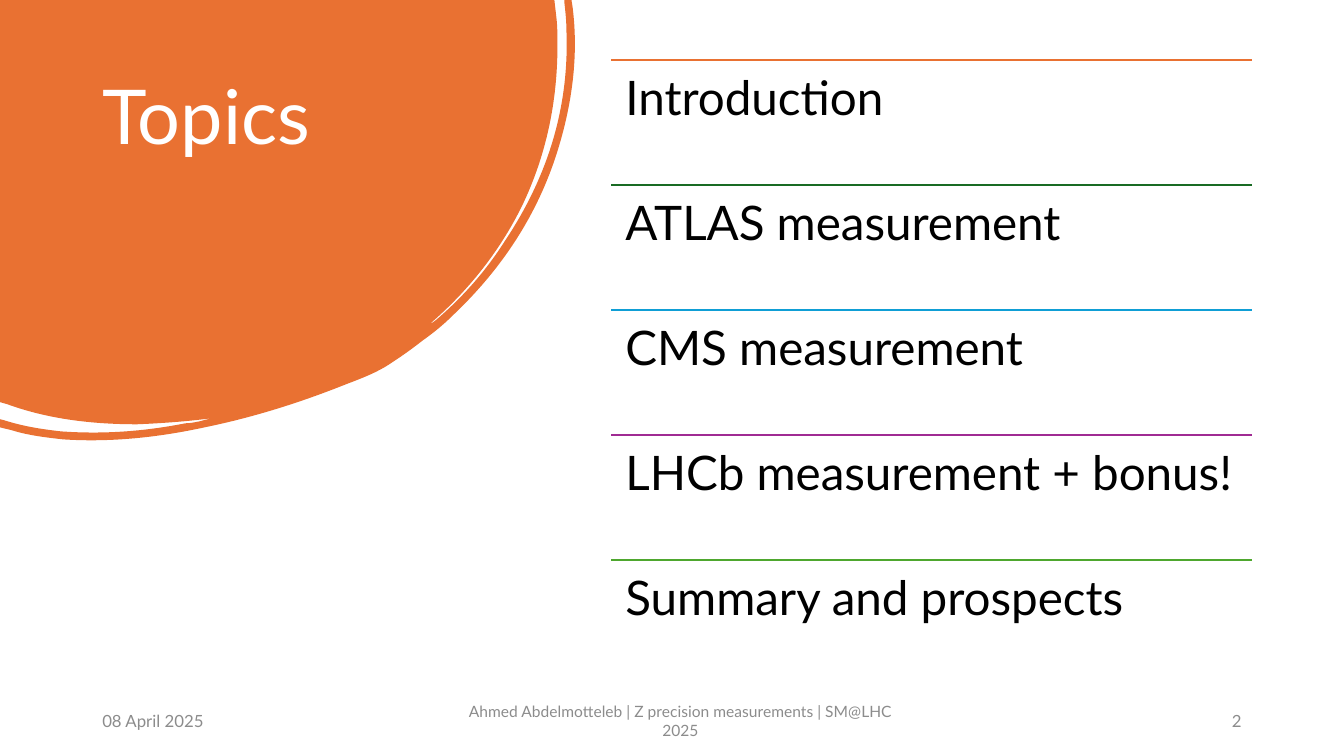
from lxml import etree
from pptx import Presentation
from pptx.dml.color import RGBColor
from pptx.enum import shapes, text
from pptx.oxml import ns
from pptx.util import Pt

FONT = "Lato"
COLORS = {"orange": "E97132", "green": "196B24", "blue": "0F9ED5", "purple": "A02B93",
          "lime": "4EA72E", "white": "FFFFFF", "black": "000000", "gray": "8C8C8C"}
TITLE = "Topics"
TOPICS = [
    ("Introduction", "orange"),
    ("ATLAS measurement", "green"),
    ("CMS measurement", "blue"),
    ("LHCb measurement + bonus!", "purple"),
    ("Summary and prospects", "lime"),
]
FOOTERS = [
    ("08 April 2025", 66, 216, 12, text.PP_ALIGN.LEFT),
    ("Ahmed Abdelmotteleb | Z precision measurements | SM@LHC 2025", 318, 336, 11.1,
     text.PP_ALIGN.CENTER),
    ("2", 678, 216, 12, text.PP_ALIGN.RIGHT),
]
BLOB_EDGES = [
    (396, 0), (397.4, 12.2),
    (398.2, 18.7, 398.2, 25.9, 398.2, 32.4),
    (398.2, 72.7, 390.2, 110.9, 373, 146.9),
    (357.1, 179.3, 334.8, 207.4, 307.4, 231.1),
    (308.9, 231.1, 309.6, 229.7, 311, 229),
    (330.5, 212.4, 347, 193.7, 360.7, 172.1),
    (391, 126.7, 406.8, 77, 404.6, 21.6),
    (404.6, 15.1, 403.9, 8.6, 403.2, 2.2),
    (403.2, 0), (408.2, 0), (409, 5),
    (413.3, 38.9, 409, 73.4, 398.2, 108),
    (383.8, 154.1, 357.8, 193, 322.6, 226.1),
    (316.1, 232.6, 308.9, 238.3, 301.7, 243.4),
    (294.5, 249.1, 287.3, 254.2, 278.6, 259.9),
    (270, 265.7, 259.2, 270, 247.7, 274.3),
    (215.3, 287.3, 181.4, 298.1, 146.2, 305.3),
    (113, 312.5, 79.2, 316.1, 45.4, 313.9),
    (32.4, 312.5, 20.2, 311, 8.6, 307.4),
    (0, 305.3), (0, 299.5), (2.9, 300.2),
    (16.6, 304.6, 30.2, 306.7, 43.9, 308.2),
    (74.2, 310.3, 103, 308.2, 132.5, 302.4),
    (136.1, 302.4, 139, 301.7, 142.6, 301),
    (145.4, 300.2, 148.3, 299.5, 151.2, 298.8),
    (133.9, 301, 115.9, 302.4, 97.9, 303.1),
    (66.2, 303.1, 34.6, 299.5, 5, 288.7),
    (0, 287.3),
]
BLOB_WIDTH, BLOB_HEIGHT = 411, 314.6
UNITS = 100
LIST_LEFT, LIST_TOP, LIST_WIDTH, ROW_HEIGHT = 436.5, 42.7, 458, 89.4


def color(name):
    return RGBColor.from_string(COLORS[name])


def bend(segment, controls):
    segment.tag = ns.qn("a:cubicBezTo")
    for index in range(2):
        point = etree.Element(ns.qn("a:pt"))
        point.set("x", str(round(controls[2 * index] * UNITS)))
        point.set("y", str(round(controls[2 * index + 1] * UNITS)))
        segment.insert(index, point)


def add_blob(page):
    builder = page.shapes.build_freeform(0, 0, scale=Pt(1 / UNITS))
    builder.add_line_segments([(edge[-2] * UNITS, edge[-1] * UNITS) for edge in BLOB_EDGES])
    blob = builder.convert_to_shape()
    for segment, edge in zip(list(blob.element.iter(ns.qn("a:lnTo"))), BLOB_EDGES):
        if len(edge) == 6:
            bend(segment, edge[:4])
    outline = next(blob.element.iter(ns.qn("a:path")))
    outline.set("w", str(round(BLOB_WIDTH * UNITS)))
    outline.set("h", str(round(BLOB_HEIGHT * UNITS)))
    blob.width, blob.height = Pt(BLOB_WIDTH), Pt(BLOB_HEIGHT)
    blob.shadow.inherit = False
    blob.fill.solid()
    blob.fill.fore_color.rgb = color("orange")
    blob.line.fill.background()
    return blob


def add_rule(page, top, name):
    rule = page.shapes.add_connector(shapes.MSO_CONNECTOR.STRAIGHT, Pt(LIST_LEFT), Pt(top),
                                     Pt(LIST_LEFT + LIST_WIDTH), Pt(top))
    rule.line.color.rgb = color(name)
    rule.line.width = Pt(1.5)
    etree.SubElement(rule.element.spPr, ns.qn("a:effectLst"))


def write(box, words, size, name, align=text.PP_ALIGN.LEFT, anchor=text.MSO_ANCHOR.TOP,
          spacing=1.0, after=6):
    frame = box.text_frame
    frame.text = words
    frame.word_wrap = True
    frame.auto_size = text.MSO_AUTO_SIZE.NONE
    frame.vertical_anchor = anchor
    para = frame.paragraphs[0]
    para.alignment = align
    para.line_spacing = spacing
    para.space_before = Pt(0)
    para.space_after = Pt(after)
    font = para.runs[0].font
    font.name, font.size, font.color.rgb = FONT, Pt(size), color(name)
    return frame


def main():
    deck = Presentation()
    deck.slide_width, deck.slide_height = Pt(960), Pt(540)
    page = deck.slides.add_slide(deck.slide_layouts[5])

    title = page.shapes.title
    title.left, title.top, title.width, title.height = Pt(66), Pt(53.3), Pt(253.5), Pt(160)
    write(title, TITLE, 54, "white", spacing=0.9)
    title.element.addprevious(add_blob(page).element)

    for words, left, width, size, align in FOOTERS:
        box = page.shapes.add_textbox(Pt(left), Pt(500.5), Pt(width), Pt(28.75))
        write(box, words, size, "gray", align, text.MSO_ANCHOR.MIDDLE)

    for row, (words, name) in enumerate(TOPICS):
        top = LIST_TOP + row * ROW_HEIGHT
        add_rule(page, top, name)
        box = page.shapes.add_textbox(Pt(LIST_LEFT), Pt(top), Pt(LIST_WIDTH), Pt(ROW_HEIGHT))
        frame = write(box, words, 34, "black", spacing=0.9, after=12)
        frame.margin_left = frame.margin_right = Pt(10.2)
        frame.margin_top = frame.margin_bottom = Pt(10.2)

    deck.save("out.pptx")


if __name__ == "__main__":
    main()
